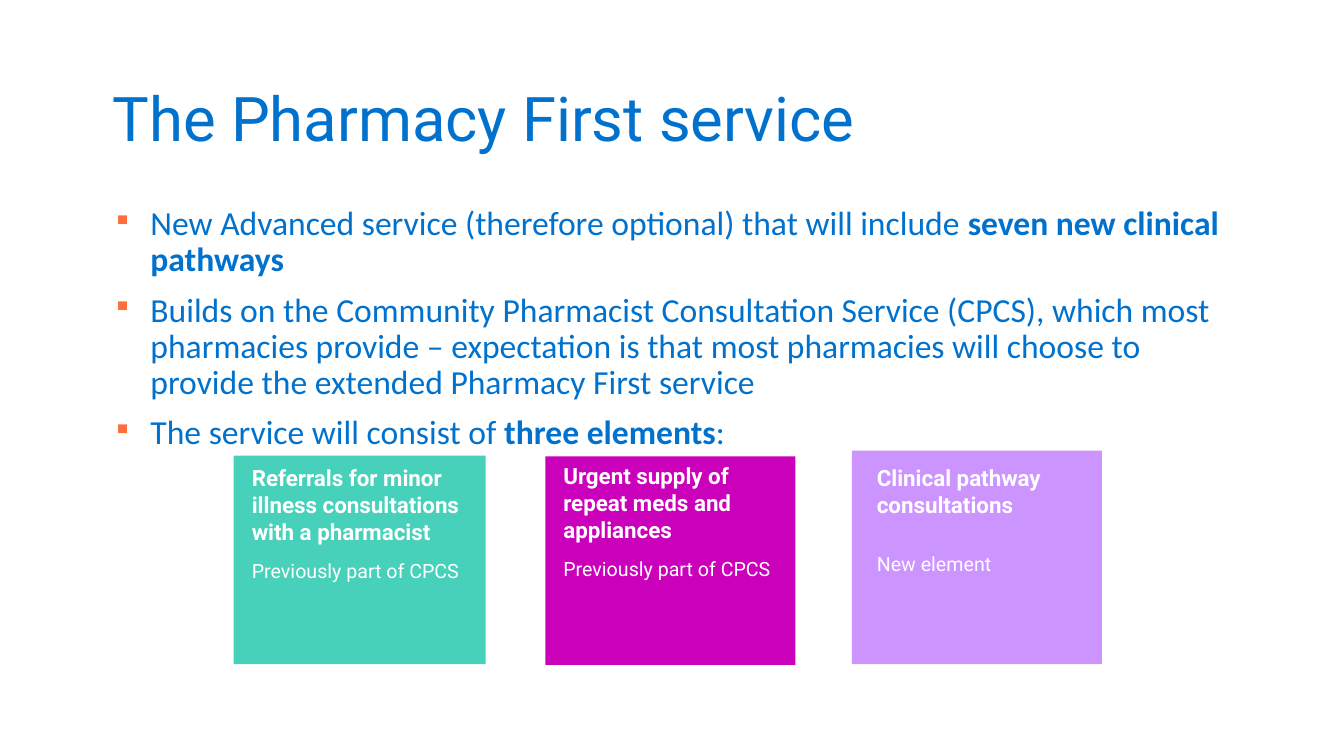
from dataclasses import dataclass

from lxml import etree
from pptx import Presentation
from pptx import util as u
from pptx.dml.color import RGBColor
from pptx.enum import shapes, text
from pptx.oxml.ns import qn
from pptx.slide import Slide
from pptx.text.text import TextFrame


@dataclass(frozen=True)
class Theme:
    blue: str = "0072CE"
    orange: str = "FF6D3A"
    white: str = "FFFFFF"
    teal: str = "47D1BA"
    magenta: str = "CB00BA"
    lilac: str = "CC94FF"
    display_font: str = "Roboto"
    body_font: str = "Calibri"
    title_size: float = 44
    body_size: float = 24
    heading_size: float = 16
    note_size: float = 14


@dataclass(frozen=True)
class Box:
    left: float
    top: float
    width: float
    height: float

    def lengths(self) -> tuple[u.Length, ...]:
        return tuple(u.Pt(v) for v in (self.left, self.top, self.width, self.height))


@dataclass(frozen=True)
class Run:
    wording: str
    bold: bool = False


@dataclass(frozen=True)
class Element:
    heading: str
    note: str
    note_gap: float
    fill: str
    panel: Box
    caption: Box


THEME = Theme()
TITLE_BOX = Box(73.4, 28.8, 820, 104.4)
POINTS_BOX = Box(73.4, 144, 820, 342.7)
BULLET_INDENT = 27

POINTS = [
    [Run("New Advanced service (therefore optional) that will include "),
     Run("seven new clinical pathways", True)],
    [Run("Builds on the Community Pharmacist Consultation Service (CPCS), which most "
         "pharmacies provide – expectation is that most pharmacies will choose to "
         "provide the extended Pharmacy First service")],
    [Run("The service will consist of "), Run("three elements", True), Run(":")],
]

ELEMENTS = [
    Element("Referrals for minor illness consultations with a pharmacist",
            "Previously part of CPCS", 10, THEME.teal,
            Box(167, 325.5, 180, 149), Box(172.8, 328.3, 173.5, 104.4)),
    Element("Urgent supply of repeat meds and appliances",
            "Previously part of CPCS", 10, THEME.magenta,
            Box(389.5, 326, 178.6, 149), Box(395.3, 326.6, 171.4, 92)),
    Element("Clinical pathway consultations",
            "New element", 24, THEME.lilac,
            Box(608.4, 321.8, 178.6, 152.6), Box(619.2, 328.3, 167, 99.4)),
]


def add_text_frame(slide: Slide, box: Box) -> TextFrame:
    frame = slide.shapes.add_textbox(*box.lengths()).text_frame
    frame.word_wrap = True
    return frame


def next_paragraph(frame: TextFrame, index: int):
    return frame.paragraphs[0] if index == 0 else frame.add_paragraph()


def style(paragraph, font: str, size: float, colour: str) -> None:
    paragraph.font.name = font
    paragraph.font.size = u.Pt(size)
    paragraph.font.color.rgb = RGBColor.from_string(colour)


def add_bullet(paragraph) -> None:
    properties = paragraph._p.get_or_add_pPr()
    properties.set("marL", str(u.Pt(BULLET_INDENT)))
    properties.set("indent", str(-u.Pt(BULLET_INDENT)))
    colour = etree.SubElement(properties, qn("a:buClr"))
    etree.SubElement(colour, qn("a:srgbClr"), val=THEME.orange)
    etree.SubElement(properties, qn("a:buSzPct"), val="80000")
    etree.SubElement(properties, qn("a:buChar"), char="▪")


def add_title(slide: Slide, wording: str) -> None:
    frame = add_text_frame(slide, TITLE_BOX)
    frame.vertical_anchor = text.MSO_ANCHOR.MIDDLE
    title = frame.paragraphs[0]
    title.text = wording
    title.line_spacing = 1.1
    style(title, THEME.display_font, THEME.title_size, THEME.blue)


def add_points(slide: Slide, points: list[list[Run]]) -> None:
    frame = add_text_frame(slide, POINTS_BOX)
    for index, runs in enumerate(points):
        point = next_paragraph(frame, index)
        add_bullet(point)
        point.line_spacing = 0.9
        point.space_before = u.Pt(10 if index else 0)
        style(point, THEME.body_font, THEME.body_size, THEME.blue)
        for part in runs:
            run = point.add_run()
            run.text = part.wording
            if part.bold:
                run.font.bold = True


def add_element(slide: Slide, element: Element) -> None:
    """Draw a coloured panel with its heading and note."""
    panel = slide.shapes.add_shape(shapes.MSO_SHAPE.RECTANGLE, *element.panel.lengths())
    panel.shadow.inherit = False
    panel.fill.solid()
    panel.fill.fore_color.rgb = RGBColor.from_string(element.fill)
    panel.line.fill.background()

    frame = add_text_frame(slide, element.caption)
    heading = frame.paragraphs[0]
    heading.text = element.heading
    style(heading, THEME.display_font, THEME.heading_size, THEME.white)
    heading.font.bold = True
    note = frame.add_paragraph()
    note.text = element.note
    note.space_before = u.Pt(element.note_gap)
    style(note, THEME.display_font, THEME.note_size, THEME.white)


def main() -> None:
    deck = Presentation()
    deck.slide_width, deck.slide_height = u.Pt(960), u.Pt(540)
    slide = deck.slides.add_slide(deck.slide_layouts[6])
    add_title(slide, "The Pharmacy First service")
    add_points(slide, POINTS)
    for element in ELEMENTS:
        add_element(slide, element)
    deck.save("out.pptx")


if __name__ == "__main__":
    main()
